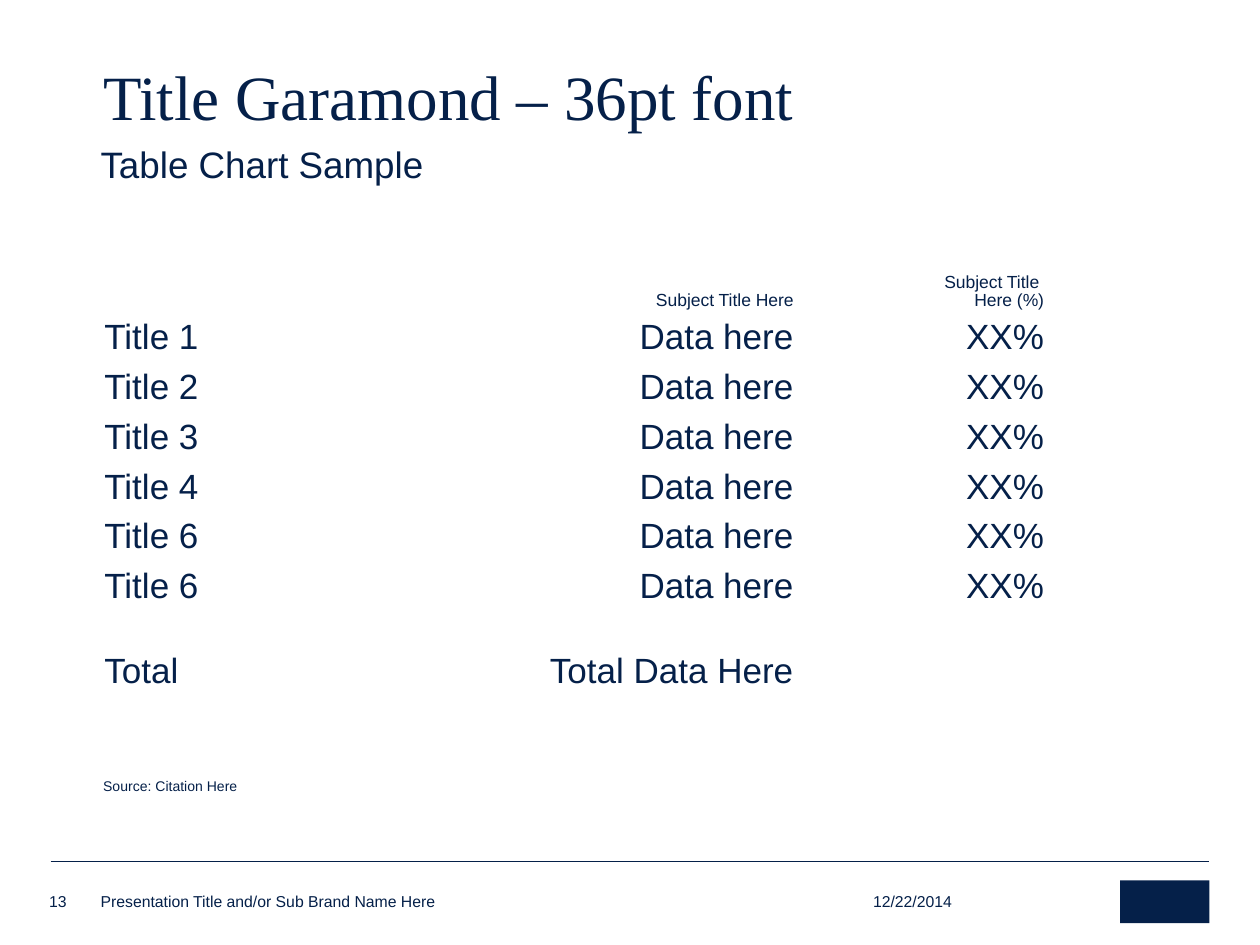
from dataclasses import dataclass

from lxml import etree
from pptx import Presentation
from pptx.dml.color import RGBColor
from pptx.enum.shapes import MSO_CONNECTOR, MSO_SHAPE
from pptx.enum.text import MSO_ANCHOR, PP_ALIGN
from pptx.oxml.ns import qn
from pptx.util import Cm, Pt

TOP, BOTTOM = MSO_ANCHOR.TOP, MSO_ANCHOR.BOTTOM
LEFT, RIGHT = PP_ALIGN.LEFT, PP_ALIGN.RIGHT
STRAIGHT = MSO_CONNECTOR.STRAIGHT
RECTANGLE = MSO_SHAPE.RECTANGLE


@dataclass(frozen=True)
class Theme:
    navy: RGBColor = RGBColor(0x05, 0x20, 0x49)
    heading_font: str = "Times New Roman"
    body_font: str = "Arial"
    title: int = 36
    subtitle: int = 21
    table_body: int = 20
    table_header: int = 10
    footer: int = 9
    source: int = 8
    rule: float = 0.25
    tight: float = 0.9


THEME = Theme()


@dataclass(frozen=True)
class Label:
    """A line of text; left, top, width, height and insets are centimetres."""
    text: str
    left: float
    top: float
    width: float
    height: float
    size: int
    font: str = THEME.body_font
    spacing: float = 1.0
    anchor: MSO_ANCHOR = BOTTOM
    inset_x: float = 0
    inset_y: float = 0


LABELS = [
    Label("Title Garamond – 36pt font", 1.83, 1.22, 22.45, 1.6, THEME.title,
          THEME.heading_font, 0.85, inset_x=0.25, inset_y=0.13),
    Label("Table Chart Sample", 1.78, 2.82, 22.43, 1.07, THEME.subtitle,
          spacing=THEME.tight, inset_x=0.25, inset_y=0.13),
    Label("12/22/2014", 17.6, 17.93, 2.57, 0.43, THEME.footer),
    Label("Presentation Title and/or Sub Brand Name Here",
          2.03, 17.98, 11.96, 0.38, THEME.footer),
    Label("13", 0.99, 17.93, 0.69, 0.43, THEME.footer),
    Label("Source: Citation Here", 2.08, 15.72, 4.22, 0.3, THEME.source,
          spacing=THEME.tight, anchor=TOP),
]

HEADER = ("", "Subject Title Here", "Subject Title \vHere (%)")
ROW_TITLES = ("Title 1", "Title 2", "Title 3", "Title 4", "Title 6", "Title 6")
TOTAL = ("Total", "Total Data Here", "")
COLUMN_WIDTHS = (7.7, 6.7, 5.05)
HEADER_HEIGHT, BODY_HEIGHT, TOTAL_HEIGHT = 0.94, 0.96, 1.65
CELL_MARGIN_Y = 0.12


def style_paragraph(paragraph, size: int, font: str, spacing: float,
                    alignment: PP_ALIGN = LEFT) -> None:
    paragraph.alignment = alignment
    paragraph.line_spacing = spacing
    paragraph.font.size = Pt(size)
    paragraph.font.name = font
    paragraph.font.color.rgb = THEME.navy


def add_label(slide, label: Label) -> None:
    box = slide.shapes.add_textbox(Cm(label.left), Cm(label.top),
                                   Cm(label.width), Cm(label.height))
    frame = box.text_frame
    frame.word_wrap = True
    frame.vertical_anchor = label.anchor
    frame.margin_left = frame.margin_right = Cm(label.inset_x)
    frame.margin_top = frame.margin_bottom = Cm(label.inset_y)
    frame.text = label.text
    style_paragraph(frame.paragraphs[0], label.size, label.font, label.spacing)


def add_data_table(slide) -> None:
    body = [(title, "Data here", "XX%") for title in ROW_TITLES]
    rows = [HEADER, *body, TOTAL]
    heights = [HEADER_HEIGHT, *[BODY_HEIGHT] * len(body), TOTAL_HEIGHT]
    table = slide.shapes.add_table(
        len(rows), len(COLUMN_WIDTHS), Cm(1.85), Cm(5.36),
        Cm(sum(COLUMN_WIDTHS)), Cm(sum(heights))).table
    table.first_row = table.horz_banding = False
    for column, width in zip(table.columns, COLUMN_WIDTHS):
        column.width = Cm(width)
    for row, height, texts in zip(table.rows, heights, rows):
        row.height = Cm(height)
        size = THEME.table_header if texts is HEADER else THEME.table_body
        for index, (cell, text) in enumerate(zip(row.cells, texts)):
            cell.fill.background()
            cell.margin_top = cell.margin_bottom = Cm(CELL_MARGIN_Y)
            cell.vertical_anchor = TOP if texts in body else BOTTOM
            cell.text = text
            style_paragraph(cell.text_frame.paragraphs[0], size,
                            THEME.body_font, THEME.tight,
                            RIGHT if index else LEFT)


def add_footer_rule(slide) -> None:
    rule = slide.shapes.add_connector(STRAIGHT, Cm(1.02), Cm(17.37),
                                      Cm(24.38), Cm(17.37))
    rule.line.color.rgb = THEME.navy
    rule.line.width = Pt(THEME.rule)
    etree.SubElement(rule._element.spPr, qn("a:effectLst"))


def add_brand_block(slide) -> None:
    block = slide.shapes.add_shape(RECTANGLE, Cm(22.58), Cm(17.75),
                                   Cm(1.8), Cm(0.86))
    block.shadow.inherit = False
    block.fill.solid()
    block.fill.fore_color.rgb = THEME.navy
    block.line.fill.background()


def main() -> None:
    presentation = Presentation()
    presentation.slide_width = Cm(25.4)
    presentation.slide_height = Cm(19.05)
    slide = presentation.slides.add_slide(presentation.slide_layouts[6])
    add_footer_rule(slide)
    add_brand_block(slide)
    for label in LABELS:
        add_label(slide, label)
    add_data_table(slide)
    presentation.save("out.pptx")


if __name__ == "__main__":
    main()
